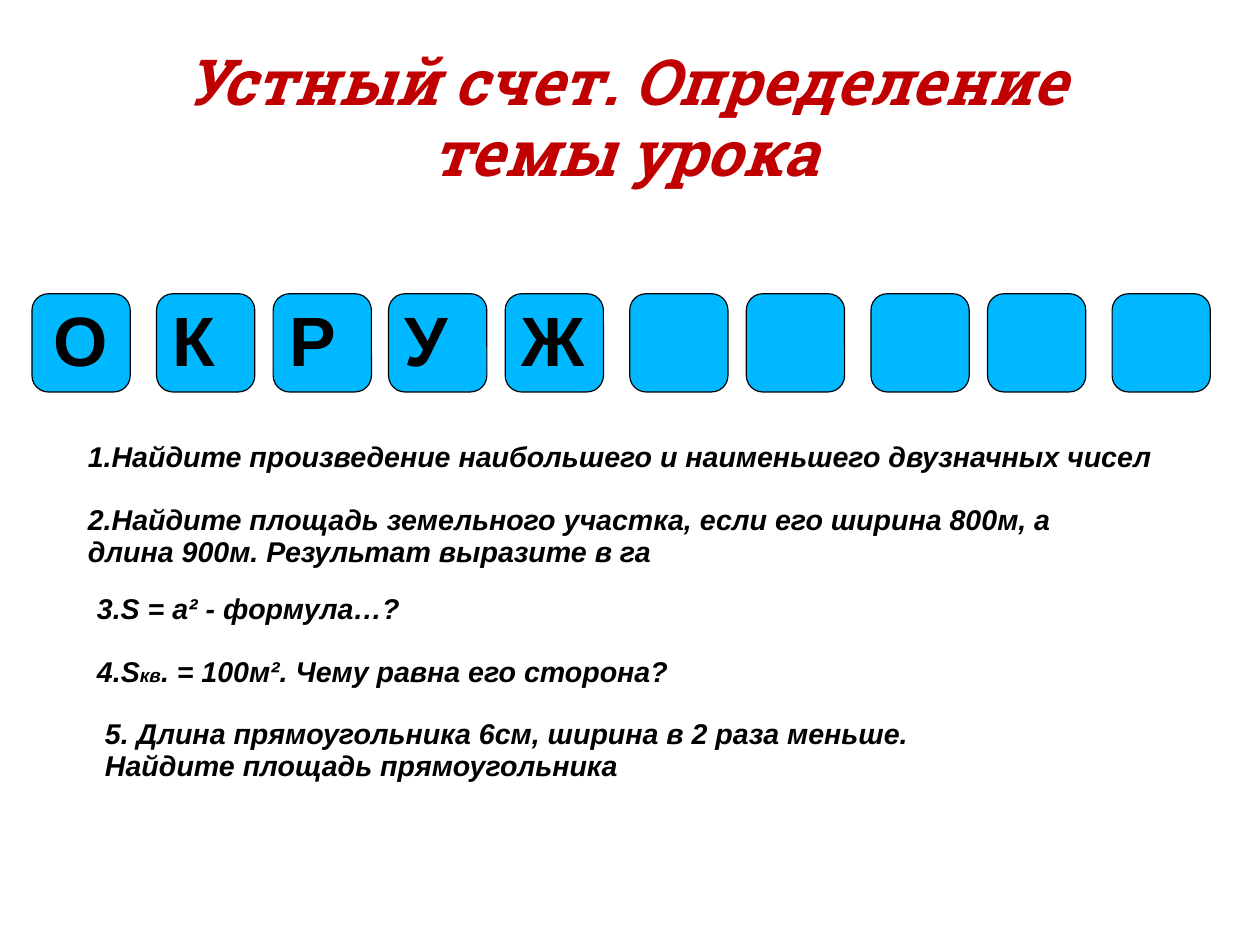
"""Build the mental arithmetic slide with letter tiles and five questions."""
import pptx
import pptx.dml.color
import pptx.enum.shapes
import pptx.enum.text
import pptx.util

Inches = pptx.util.Inches
Align = pptx.enum.text.PP_ALIGN
Anchor = pptx.enum.text.MSO_ANCHOR

SLIDE_WIDTH, SLIDE_HEIGHT = pptx.util.Cm(28), pptx.util.Cm(21)
TITLE = "Устный счет. Определение темы урока"
TILES = [
    ("О", 0.28), ("К", 1.37), ("Р", 2.39), ("У", 3.4), ("Ж", 4.42),
    ("", 5.51), ("", 6.53), ("", 7.62), ("", 8.64), ("", 9.73),
]
TILE_TOP, TILE_SIZE = 2.57, 0.86
QUESTIONS = [
    ((0.67, 3.82, 9.53, 0.38), False,
     [[("1.Найдите произведение наибольшего и наименьшего двузначных чисел", 18)]]),
    ((0.67, 4.37, 8.98, 0.66), True,
     [[("2.Найдите площадь земельного участка, если его ширина 800м, а", 18)],
      [("длина 900м. Результат выразите в га", 18)]]),
    ((0.75, 5.15, 2.87, 0.38), False, [[("3.S = a² - формула…?", 18)]]),
    ((0.75, 5.7, 5.32, 0.38), False,
     [[("4.S", 18), ("кв", 12), (". = 100м². Чему равна его сторона?", 18)]]),
    ((0.82, 6.24, 7.37, 0.66), False,
     [[("5. Длина прямоугольника 6см, ширина в 2 раза меньше.", 18)],
      [("Найдите площадь прямоугольника", 18)]]),
]


def color(value):
    return pptx.dml.color.RGBColor.from_string(value)


def write(shape, paragraphs, align=Align.LEFT, font="Arial", ink="000000",
          italic=True, wrap=True, anchor=Anchor.TOP):
    frame = shape.text_frame
    frame.word_wrap = wrap
    frame.vertical_anchor = anchor
    for index, runs in enumerate(paragraphs):
        paragraph = frame.add_paragraph() if index else frame.paragraphs[0]
        paragraph.alignment = align
        paragraph.line_spacing = 0.93
        for text, size in runs:
            run = paragraph.add_run()
            run.text = text
            run.font.name = font
            run.font.size = pptx.util.Pt(size)
            run.font.bold = True
            run.font.italic = italic
            run.font.color.rgb = color(ink)


def add_tile(slide, letter, left, align):
    tile = slide.shapes.add_shape(
        pptx.enum.shapes.MSO_SHAPE.ROUNDED_RECTANGLE,
        Inches(left), Inches(TILE_TOP), Inches(TILE_SIZE), Inches(TILE_SIZE))
    tile.shadow.inherit = False
    tile.fill.solid()
    tile.fill.fore_color.rgb = color("00B8FF")
    tile.line.color.rgb = color("000000")
    tile.line.width = pptx.util.Pt(0.75)
    if letter:
        write(tile, [[(letter, 44)]], align, italic=False, anchor=Anchor.MIDDLE)


def add_text(slide, box, paragraphs, **style):
    shape = slide.shapes.add_textbox(*map(Inches, box))
    write(shape, paragraphs, **style)
    return shape


def main():
    presentation = pptx.Presentation()
    presentation.slide_width = SLIDE_WIDTH
    presentation.slide_height = SLIDE_HEIGHT
    slide = presentation.slides.add_slide(presentation.slide_layouts[6])
    add_text(slide, (1.22, 0.38, 8.5, 1.61), [[(TITLE, 40)]],
             align=Align.CENTER, font="Roboto Slab", ink="C00000")
    for index, (letter, left) in enumerate(TILES):
        add_tile(slide, letter, left, Align.LEFT if index else Align.CENTER)
    for box, wrap, paragraphs in QUESTIONS:
        question = add_text(slide, box, paragraphs, wrap=wrap)
        question.text_frame.auto_size = pptx.enum.text.MSO_AUTO_SIZE.SHAPE_TO_FIT_TEXT
    presentation.save("out.pptx")


if __name__ == "__main__":
    main()
